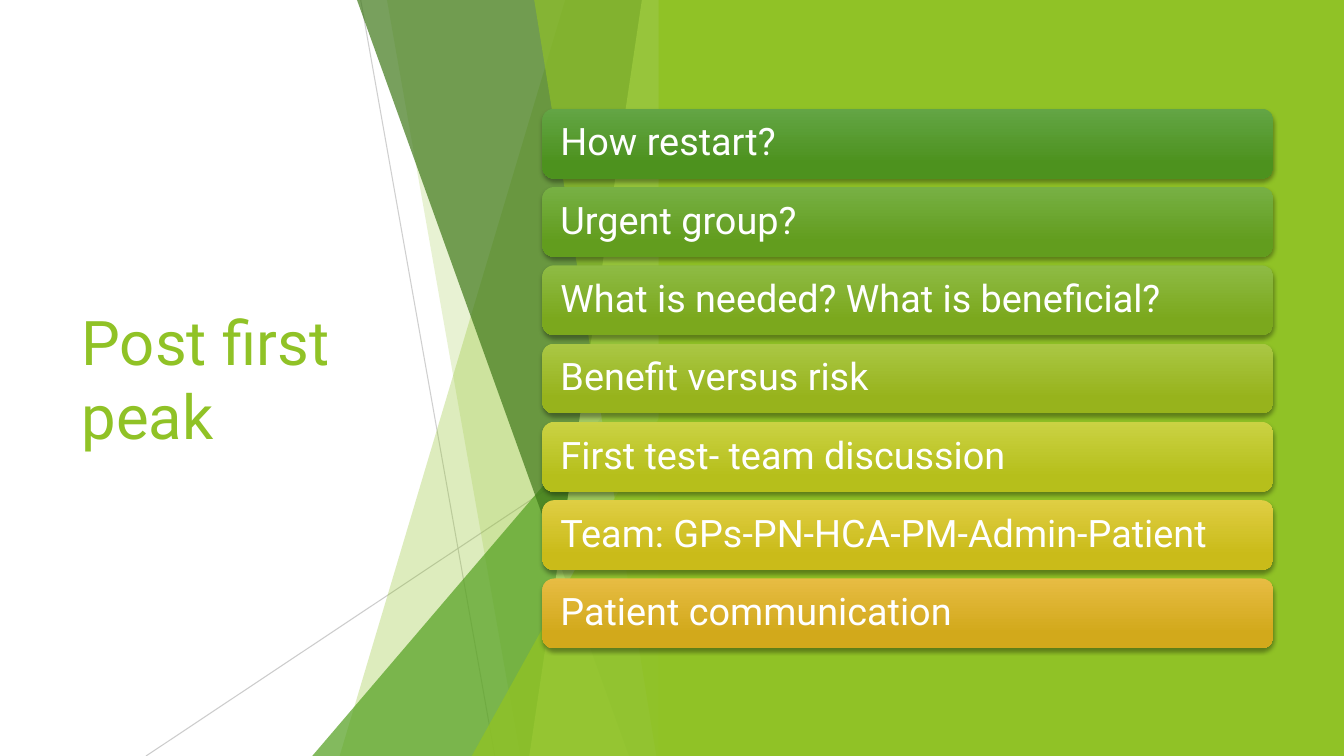
"""Build the "Post first peak" slide: a faceted green panel with seven bars."""
from dataclasses import dataclass

from lxml.etree import SubElement
from pptx import Presentation
from pptx.dml.color import RGBColor
from pptx.enum.shapes import MSO_CONNECTOR, MSO_SHAPE
from pptx.enum.text import MSO_ANCHOR, MSO_AUTO_SIZE, PP_ALIGN
from pptx.oxml.ns import qn
from pptx.util import Cm, Pt

WIDE, HIGH = 33.87, 19.05
EDGE = 16.92
TOP = -0.02
LIME, WHITE = "90C226", "FFFFFF"


@dataclass
class Ray:
    start: tuple[float, float]
    end: tuple[float, float]
    alpha: int


@dataclass
class Facet:
    upper: float
    lower: float
    tint: str
    alpha: int


@dataclass
class Wedge:
    left: float
    top: float
    tint: str
    alpha: int


@dataclass
class Bar:
    words: str
    light: str
    dark: str


RAYS = [Ray((9.09, 0), (12.47, HIGH), 75), Ray((EDGE, 10.24), (3.68, HIGH), 80)]
PANES = [
    Facet(14.25, 8.56, LIME, 30),
    Facet(9.75, 13.11, LIME, 20),
    Wedge(7.87, 8.46, "54A021", 72),
    Facet(8.99, 15.85, "3F7819", 70),
    Facet(16.18, 13.34, "C0E474", 70),
    Facet(13.46, 16.54, LIME, 65),
    Wedge(11.89, 9.98, LIME, 80),
]
BARS = [
    Bar("How restart?", "63A545", "4D921E"),
    Bar("Urgent group?", "77B044", "629D1E"),
    Bar("What is needed? What is beneficial?", "8EBB44", "7BA81D"),
    Bar("Benefit versus risk", "AAC744", "97B31C"),
    Bar("First test- team discussion", "CAD243", "B6BF1B"),
    Bar("Team: GPs-PN-HCA-PM-Admin-Patient", "DFCE43", "CABB19"),
    Bar("Patient communication", "E7BC43", "D2A91B"),
]
BAR_LEFT, BAR_TOP, BAR_WIDE, BAR_HIGH, PITCH = 13.67, 2.74, 18.42, 1.76, 1.973


def tint(color, code: str) -> None:
    """Give a colour format its hex value."""
    color.rgb = RGBColor.from_string(code)


def apply(target, values: dict) -> None:
    """Set each named value on the target."""
    for name, value in values.items():
        setattr(target, name, value)


def fade(shape, alpha: int) -> None:
    """Make every colour of a shape partly clear."""
    for color in list(shape.element.spPr.iter(qn("a:srgbClr"))):
        SubElement(color, qn("a:alpha"), val=str(alpha * 1000))


def paint(shape, code: str) -> None:
    """Give a shape a plain fill with no outline or shadow."""
    shape.fill.solid()
    tint(shape.fill.fore_color, code)
    shape.line.fill.background()
    shape.shadow.inherit = False


def write(frame, words: str, size: float, code: str, form: dict, para: dict) -> None:
    """Fill a text frame with one styled paragraph."""
    frame.text = words
    apply(frame, form)
    first = frame.paragraphs[0]
    apply(first, para)
    apply(first.font, {"size": Pt(size), "name": "Roboto"})
    tint(first.font.color, code)


def draw_ray(shapes, ray: Ray) -> None:
    """Draw one thin grey line."""
    line = shapes.add_connector(
        MSO_CONNECTOR.STRAIGHT, *(Cm(n) for n in ray.start + ray.end))
    tint(line.line.color, "BFBFBF")
    line.line.width = Pt(0.75)
    SubElement(line.element.spPr, qn("a:effectLst"))
    fade(line, ray.alpha)


def draw_pane(shapes, pane: Facet | Wedge) -> None:
    """Draw one clear pane that ends at the shared edge."""
    if isinstance(pane, Wedge):
        shape = shapes.add_shape(
            MSO_SHAPE.ISOSCELES_TRIANGLE, Cm(pane.left), Cm(pane.top),
            Cm(EDGE - pane.left), Cm(HIGH - pane.top))
        shape.adjustments[0] = 1
    else:
        rest = [(EDGE, TOP), (EDGE, HIGH), (pane.lower, HIGH)]
        form = shapes.build_freeform(Cm(pane.upper), Cm(TOP))
        form.add_line_segments([(Cm(x), Cm(y)) for x, y in rest])
        shape = form.convert_to_shape()
    paint(shape, pane.tint)
    fade(shape, pane.alpha)


def draw_bar(shapes, bar: Bar, row: int) -> None:
    """Draw one shaded bar with its words."""
    shape = shapes.add_shape(
        MSO_SHAPE.ROUNDED_RECTANGLE, Cm(BAR_LEFT), Cm(BAR_TOP + row * PITCH),
        Cm(BAR_WIDE), Cm(BAR_HIGH))
    shape.line.fill.background()
    shape.fill.gradient()
    shape.fill.gradient_angle = 270
    for stop, code, place in zip(
            shape.fill.gradient_stops, (bar.light, bar.dark), (0, 0.78)):
        tint(stop.color, code)
        stop.position = place
    shape.shadow.inherit = False
    effect = shape.element.spPr.find(qn("a:effectLst"))
    shade = SubElement(
        effect, qn("a:outerShdw"), blurRad=str(Pt(3)), dist=str(Pt(2)),
        dir="5400000", algn="ctr", rotWithShape="0")
    black = SubElement(shade, qn("a:srgbClr"), val="000000")
    SubElement(black, qn("a:alpha"), val="35000")
    write(shape.text_frame, bar.words, 27, WHITE,
          {"margin_left": Cm(0.37), "margin_right": Cm(0.37),
           "word_wrap": True, "vertical_anchor": MSO_ANCHOR.MIDDLE},
          {"alignment": PP_ALIGN.LEFT, "line_spacing": 0.9})


def main() -> None:
    """Build and save the slide."""
    deck = Presentation()
    apply(deck, {"slide_width": Cm(WIDE), "slide_height": Cm(HIGH)})
    shapes = deck.slides.add_slide(deck.slide_layouts[5]).shapes
    title = shapes.title
    apply(title, {"left": Cm(1.8), "top": Cm(3.84),
                  "width": Cm(9.86), "height": Cm(11.38)})
    write(title.text_frame, "Post first peak", 44, LIME,
          {"word_wrap": True, "auto_size": MSO_AUTO_SIZE.NONE,
           "vertical_anchor": MSO_ANCHOR.MIDDLE},
          {"alignment": PP_ALIGN.LEFT})
    for ray in RAYS:
        draw_ray(shapes, ray)
    for pane in PANES:
        draw_pane(shapes, pane)
    panel = shapes.add_shape(
        MSO_SHAPE.RECTANGLE, Cm(16.6), 0, Cm(WIDE - 16.6), Cm(HIGH))
    paint(panel, LIME)
    for row, bar in enumerate(BARS):
        draw_bar(shapes, bar, row)
    deck.save("out.pptx")


if __name__ == "__main__":
    main()
